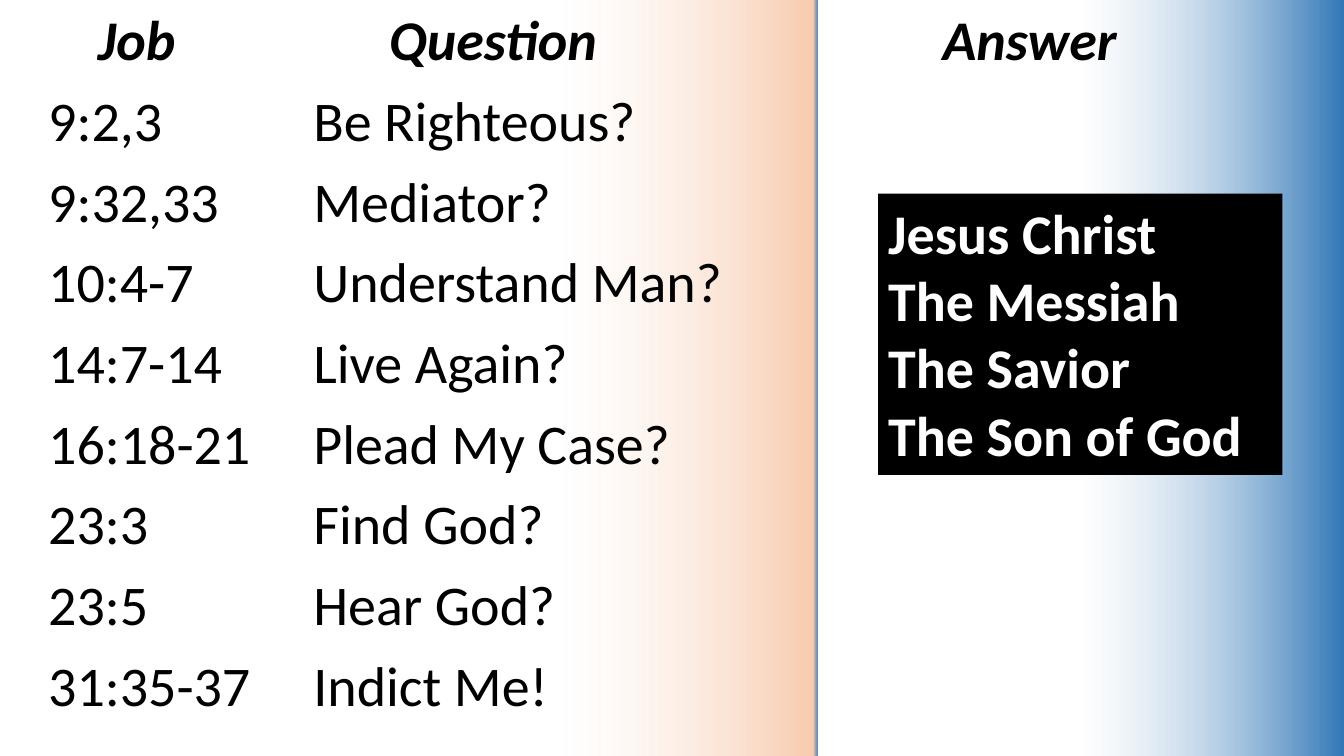
"""Build the slide of questions in Job and their answer."""
from dataclasses import dataclass

from lxml.etree import SubElement
from pptx import Presentation
from pptx.dml.color import RGBColor
from pptx.enum.shapes import MSO_SHAPE
from pptx.enum.text import MSO_ANCHOR, PP_ALIGN
from pptx.oxml.ns import qn
from pptx.util import Inches, Pt


@dataclass
class Stop:
    place: int
    color: str
    alpha: int = 100


@dataclass
class Panel:
    left: float
    top: float
    width: float
    height: float
    lines: list[str]
    head: str = ""
    shift: float = 0
    inset: float = 0
    center: bool = False
    fill: str = ""
    stops: tuple[Stop, ...] = ()
    ink: str = "000000"
    bold: bool = False


PANELS = [
    Panel(0, 0, 2.71, 7.91,
          ["9:2,3", "9:32,33", "10:4-7", "14:7-14", "16:18-21",
           "23:3", "23:5", "31:35-37"],
          head="Job", inset=0.38, center=True),
    Panel(3.01, 0, 5.1, 7.91,
          ["Be Righteous?", "Mediator?", "Understand Man?", "Live Again?",
           "Plead My Case?", "Find God?", "Hear God?", "Indict Me!"],
          head="Question", shift=0.75,
          stops=(Stop(49, "FFFFFF", 29), Stop(99, "F8CBAD"),
                 Stop(100, "2E75B6"))),
    Panel(8.12, 0, 5.22, 7.64, [], head="Answer", shift=1.13,
          stops=(Stop(49, "FFFFFF", 29), Stop(100, "2E75B6"),
                 Stop(100, "2F5597"))),
    Panel(8.71, 1.92, 4.01, 2.79,
          ["Jesus Christ", "The Messiah", "The Savior", "The Son of God"],
          fill="000000", ink="FFFFFF", bold=True),
]


def rgb(code: str) -> RGBColor:
    """Turn a hex string into a colour."""
    return RGBColor.from_string(code)


def blend(shape, stops: tuple[Stop, ...]) -> None:
    """Fill a shape from left to right through the stops."""
    shape.fill.gradient()
    shape.fill.gradient_angle = 0
    chain = shape._element.spPr.find(f".//{qn('a:gsLst')}")
    for old in list(chain):
        chain.remove(old)
    for stop in stops:
        node = SubElement(chain, qn("a:gs"), pos=str(stop.place * 1000))
        color = SubElement(node, qn("a:srgbClr"), val=stop.color)
        if stop.alpha < 100:
            SubElement(color, qn("a:alpha"), val=str(stop.alpha * 1000))


def write(frame, panel: Panel) -> None:
    """Write the heading and the lines of a panel."""
    frame.word_wrap = True
    frame.vertical_anchor = MSO_ANCHOR.TOP
    heads = [panel.head] if panel.head else []
    for row, text in enumerate(heads + panel.lines):
        para = frame.paragraphs[0] if row == 0 else frame.add_paragraph()
        para.text = text
        title = row < len(heads)
        middle = title and panel.center
        para.alignment = PP_ALIGN.CENTER if middle else PP_ALIGN.LEFT
        indent = panel.shift if title else panel.inset
        para._p.get_or_add_pPr().set("marL", str(Inches(indent)))
        if heads and not title:
            para.space_before = Pt(9.6)
        font = para.font
        font.name, font.size = "Calibri", Pt(40)
        font.bold, font.italic = title or panel.bold, title
        font.color.rgb = rgb(panel.ink)


def draw(shapes, panel: Panel) -> None:
    """Draw one panel with its text."""
    box = [Inches(n) for n in
           (panel.left, panel.top, panel.width, panel.height)]
    if panel.fill or panel.stops:
        shape = shapes.add_shape(MSO_SHAPE.RECTANGLE, *box)
        shape.shadow.inherit = False
        shape.line.fill.background()
        if panel.stops:
            blend(shape, panel.stops)
        else:
            shape.fill.solid()
            shape.fill.fore_color.rgb = rgb(panel.fill)
    else:
        shape = shapes.add_textbox(*box)
    write(shape.text_frame, panel)


def main() -> None:
    """Build and save the slide."""
    deck = Presentation()
    deck.slide_width, deck.slide_height = Inches(13.33), Inches(7.5)
    slide = deck.slides.add_slide(deck.slide_layouts[6])
    for panel in PANELS:
        draw(slide.shapes, panel)
    deck.save("out.pptx")


if __name__ == "__main__":
    main()
